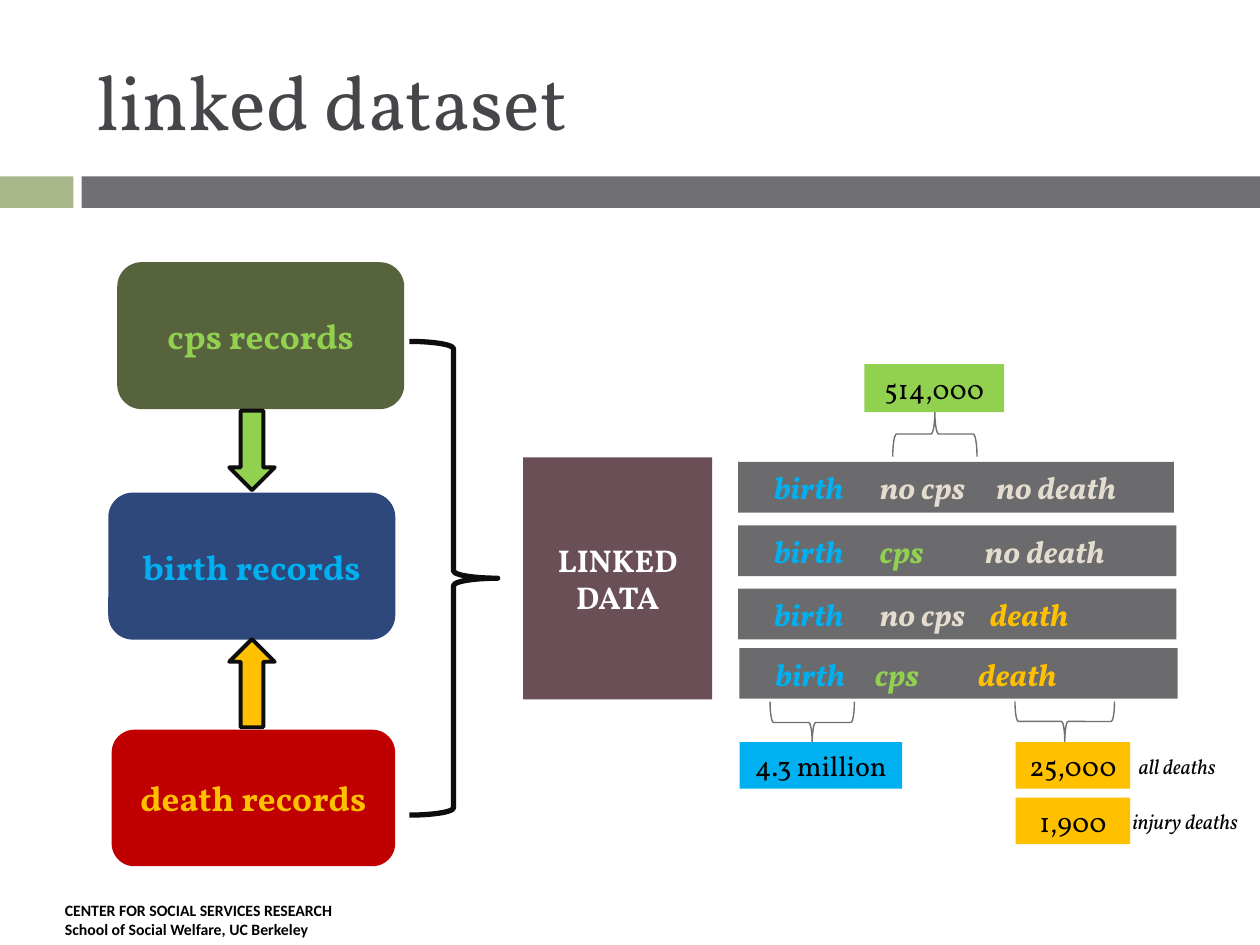
from dataclasses import dataclass
from lxml.etree import SubElement
from pptx import Presentation
from pptx.dml.color import RGBColor
from pptx.enum.shapes import MSO_SHAPE as Preset
from pptx.enum.text import MSO_ANCHOR as Anchor, PP_ALIGN as Align
from pptx.oxml.ns import qn
from pptx.util import Pt


@dataclass(frozen=True)
class Theme:
    serif: str = "Vollkorn"
    sans: str = "Calibri"
    title: str = "46464A"
    sage: str = "A7B789"
    gray: str = "6F6F74"
    ink: str = "0D0D0D"
    black: str = "000000"
    white: str = "FFFFFF"
    olive: str = "56633D"
    navy: str = "002060"
    red: str = "C00000"
    plum: str = "6A4F57"
    charcoal: str = "353537"
    sky: str = "00B0F0"
    green: str = "92D050"
    amber: str = "FFC000"
    cream: str = "E3DCCF"
    title_size: int = 44
    record_size: int = 20
    linked_size: int = 18
    count_size: int = 16
    note_size: int = 12
    footer_size: int = 9


T = Theme()

TITLE = ("linked dataset", (48, 18, 642, 78))
FOOTER = (["CENTER FOR SOCIAL SERVICES RESEARCH", "School of Social Welfare, UC Berkeley"],
          (30, 511, 210, 29))
BANDS = [((0, 100.8, 42, 18), T.sage), ((46.6, 100.8, 673.4, 18), T.gray)]
RECORDS = [
    ("cps records", (67, 149.8, 164, 84), T.olive, 100, T.green),
    ("birth records", (61.9, 281.5, 164, 84), T.navy, 82, T.sky),
    ("death records", (63.8, 417, 162, 78), T.red, 100, T.amber),
]
ARROWS = [
    (Preset.DOWN_ARROW, (131, 234.7, 26, 45.4), T.green),
    (Preset.UP_ARROW, (131, 365.2, 26, 50.4), T.amber),
]
LINKED = ("LINKED DATA", (299, 261.4, 108, 138.2))
BIRTH = ("birth", T.sky)
CPS, NO_CPS = ("cps", T.green), ("no cps", T.cream)
DEATH, NO_DEATH = ("death", T.amber), ("no death", T.cream)
OUTCOMES = [
    ((421.8, 264, 249.1, 29), [BIRTH, NO_CPS, NO_DEATH], (60.5, 127)),
    ((421.8, 300.2, 250.4, 29), [BIRTH, CPS, NO_DEATH], (60.5, 120.5)),
    ((421.8, 336.4, 250.4, 29), [BIRTH, NO_CPS, DEATH], (60.5, 123.5)),
    ((422.6, 370.3, 250.4, 29), [BIRTH, CPS, DEATH], (57, 116)),
]
BRACES = [
    ((234, 195.1, 50.4, 270.7), 0, T.ink, 3),
    ((452.2, 388.8, 23.8, 48.2), 90, T.gray, 0.79),
    ((521.3, 223.9, 25.9, 48.2), 270, T.gray, 0.79),
    ((596.9, 383.8, 23, 56.9), 90, T.gray, 0.79),
]
COUNTS = [
    ("4.3 million", (422.6, 424.1, 92.9, 26.6), T.sky),
    ("514,000", (493.9, 208.1, 79.9, 27.4), T.green),
    ("25,000", (580.3, 424.1, 65.5, 26.6), T.amber),
    ("1,900", (580.3, 455.8, 65.5, 26.6), T.amber),
]
NOTES = [
    ("all deaths", (643.7, 427, 66.2, 21.6)),
    ("injury deaths", (640.1, 458.6, 82.8, 21.6)),
]


def color(value):
    return RGBColor.from_string(value)


def add_run(paragraph, words, size, ink, face=T.serif, bold=False, italic=False):
    run = paragraph.add_run()
    run.text = words
    font = run.font
    font.name, font.size, font.bold, font.italic = face, Pt(size), bold, italic
    font.color.rgb = color(ink)


def add_figure(slide, preset, place, fill=None, opacity=100, line=None, weight=1):
    figure = slide.shapes.add_shape(preset, *map(Pt, place))
    figure.shadow.inherit = False
    if fill:
        figure.fill.solid()
        figure.fill.fore_color.rgb = color(fill)
        if opacity < 100:
            solid = figure.fill._xPr.find(qn("a:solidFill"))
            SubElement(solid[0], qn("a:alpha")).set("val", str(opacity * 1000))
    else:
        figure.fill.background()
    if line:
        figure.line.color.rgb = color(line)
        figure.line.width = Pt(weight)
    else:
        figure.line.fill.background()
    return figure


def add_label(figure, words, size, ink, bold=False):
    frame = figure.text_frame
    frame.word_wrap = True
    frame.vertical_anchor = Anchor.MIDDLE
    frame.paragraphs[0].alignment = Align.CENTER
    add_run(frame.paragraphs[0], words, size, ink, bold=bold)


def add_outcome(slide, place, states, stops):
    bar = add_figure(slide, Preset.RECTANGLE, place, T.charcoal, 73)
    frame = bar.text_frame
    frame.word_wrap = True
    frame.vertical_anchor = Anchor.MIDDLE
    frame.margin_left = Pt(20.4)
    paragraph = frame.paragraphs[0]
    paragraph.alignment = Align.LEFT
    tabs = SubElement(paragraph._p.get_or_add_pPr(), qn("a:tabLst"))
    for stop in stops:
        tab = SubElement(tabs, qn("a:tab"))
        tab.set("pos", str(Pt(stop)))
        tab.set("algn", "l")
    for index, (state, ink) in enumerate(states):
        add_run(paragraph, "\t" + state if index else state, T.linked_size, ink,
                bold=True, italic=True)


def add_text(slide, lines, place, size, **style):
    frame = slide.shapes.add_textbox(*map(Pt, place)).text_frame
    frame.word_wrap = True
    for index, words in enumerate(lines):
        paragraph = frame.add_paragraph() if index else frame.paragraphs[0]
        add_run(paragraph, words, size, T.black, **style)


def main():
    deck = Presentation()
    deck.slide_width, deck.slide_height = Pt(720), Pt(540)
    slide = deck.slides.add_slide(deck.slide_layouts[5])

    for place, fill in BANDS:
        add_figure(slide, Preset.RECTANGLE, place, fill)
    lines, place = FOOTER
    add_text(slide, lines, place, T.footer_size, face=T.sans, bold=True)

    words, place = TITLE
    title = slide.shapes.title
    title.left, title.top, title.width, title.height = map(Pt, place)
    title.text_frame.vertical_anchor = Anchor.MIDDLE
    heading = title.text_frame.paragraphs[0]
    heading.alignment = Align.LEFT
    add_run(heading, words, T.title_size, T.title)

    for words, place, fill, opacity, ink in RECORDS:
        record = add_figure(slide, Preset.ROUNDED_RECTANGLE, place, fill, opacity)
        add_label(record, words, T.record_size, ink, bold=True)
    for preset, place, fill in ARROWS:
        add_figure(slide, preset, place, fill, line=T.ink, weight=2.25)

    words, place = LINKED
    linked = add_figure(slide, Preset.RECTANGLE, place, T.plum)
    add_label(linked, words, T.linked_size, T.white, bold=True)
    for place, states, stops in OUTCOMES:
        add_outcome(slide, place, states, stops)
    for place, turn, ink, weight in BRACES:
        brace = add_figure(slide, Preset.RIGHT_BRACE, place, line=ink, weight=weight)
        brace.rotation = turn
    for words, place, fill in COUNTS:
        count = add_figure(slide, Preset.RECTANGLE, place, fill)
        add_label(count, words, T.count_size, T.black)
    for words, place in NOTES:
        add_text(slide, [words], place, T.note_size, italic=True)

    deck.save("out.pptx")


if __name__ == "__main__":
    main()
